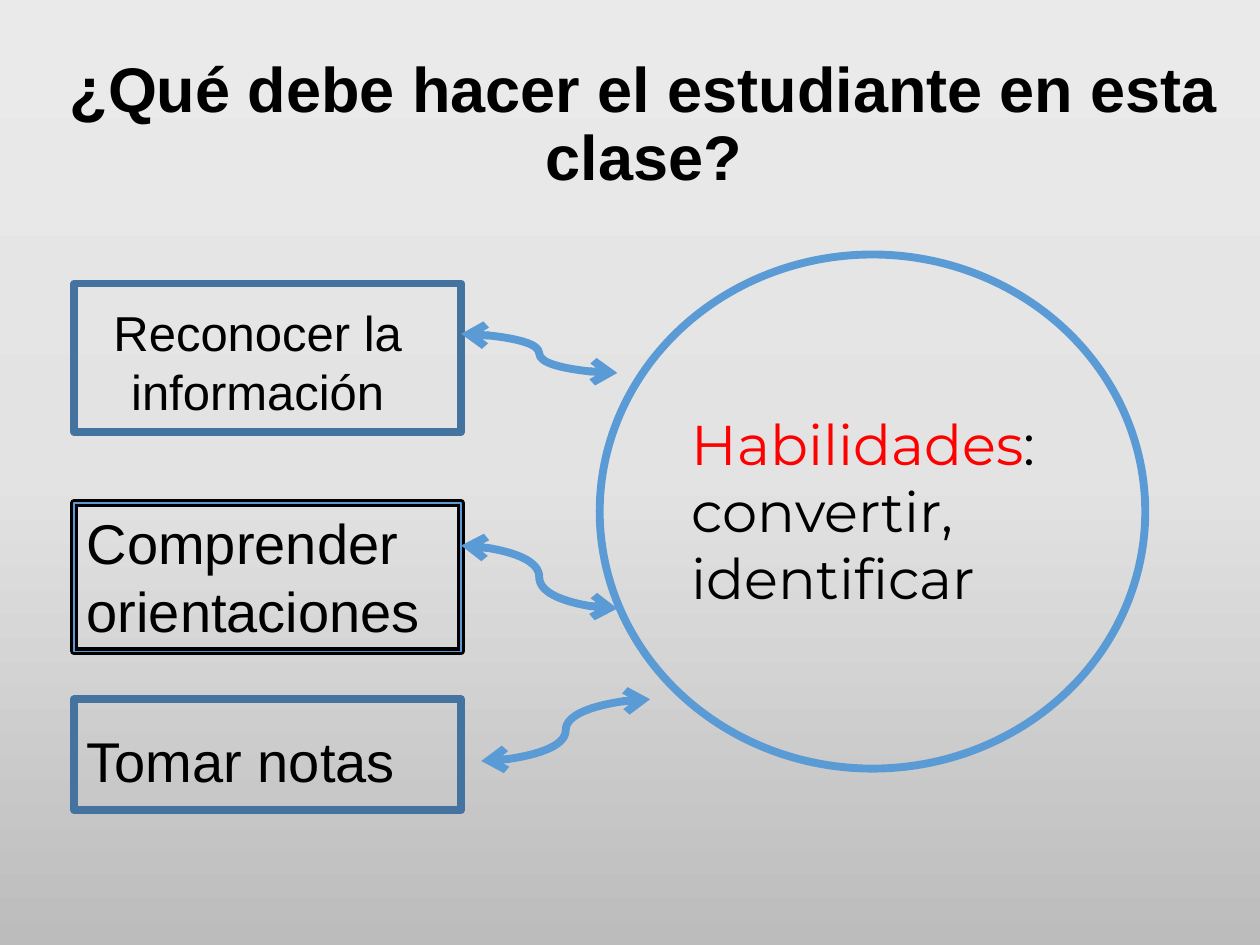
from copy import deepcopy
from dataclasses import dataclass

from pptx import Presentation
from pptx import util as u
from pptx.dml.color import RGBColor
from pptx.enum import shapes, text
from pptx.oxml.ns import qn
from lxml import etree


@dataclass(frozen=True)
class Theme:
    background: tuple = ((0, "EBEAEA"), (0.5, "E4E3E3"), (1, "BDBCBC"))
    ink: str = "000000"
    accent: str = "FF0000"
    blue: str = "5B9BD5"
    dark_blue: str = "43739E"
    body_font: str = "Arial"
    skill_font: str = "Montserrat"
    title_size: int = 36
    body_size: int = 32
    small_size: int = 28
    thick: float = 4.5
    thin: float = 1


THEME = Theme()
LEFT, CENTER = text.PP_ALIGN.LEFT, text.PP_ALIGN.CENTER
RECTANGLE, OVAL = shapes.MSO_SHAPE.RECTANGLE, shapes.MSO_SHAPE.OVAL


def inches(values):
    return [u.Inches(value) for value in values]


def paint_background(page):
    fill = page.background.fill
    fill.gradient()
    fill.gradient_angle = 270
    first = fill.gradient_stops[0]._gs
    first.addnext(deepcopy(first))
    for stop, (position, color) in zip(fill.gradient_stops, THEME.background):
        stop.position = position
        stop.color.rgb = RGBColor.from_string(color)


def style_line(line, color, width):
    line.color.rgb = RGBColor.from_string(color)
    line.width = u.Pt(width)


def add_outline(page, preset, place, color, width=THEME.thick):
    shape = page.shapes.add_shape(preset, *inches(place))
    shape.shadow.inherit = False
    shape.fill.background()
    style_line(shape.line, color, width)
    return shape


def add_text(page, place, parts, size, align=LEFT, font=THEME.body_font, bold=False):
    """Parts are (wording, colour) pairs that form one paragraph."""
    box = page.shapes.add_textbox(*inches(place))
    box.text_frame.word_wrap = True
    para = box.text_frame.paragraphs[0]
    para.alignment = align
    for wording, color in parts:
        span = para.add_run()
        span.text = wording
        span.font.name = font
        span.font.size = u.Pt(size)
        span.font.bold = bold
        span.font.color.rgb = RGBColor.from_string(color)
    return box


def add_double_arrow(page, start, end):
    arrow = page.shapes.add_connector(
        shapes.MSO_CONNECTOR.CURVE, *inches(start + end))
    style_line(arrow.line, THEME.blue, THEME.thick)
    line = arrow.line._get_or_add_ln()
    for tag in ("a:headEnd", "a:tailEnd"):
        etree.SubElement(line, qn(tag), type="arrow")
    etree.SubElement(arrow._element.spPr, qn("a:effectLst"))


def main():
    deck = Presentation()
    deck.slide_width, deck.slide_height = inches((10, 7.5))
    page = deck.slides.add_slide(deck.slide_layouts[6])
    paint_background(page)

    # Title
    title = add_text(page, (0.43, 0.41, 9.36, 1.18),
                     [("¿Qué debe hacer el estudiante en esta clase?", THEME.ink)],
                     THEME.title_size, CENTER, bold=True)
    title.text_frame.vertical_anchor = text.MSO_ANCHOR.MIDDLE
    title.text_frame.paragraphs[0].line_spacing = 0.9

    # Task frames; the middle one has a thin blue line over a black one
    left, width = 0.59, 3.07
    middle = (left, 3.99, width, 1.18)
    add_outline(page, RECTANGLE, (left, 2.25, width, 1.18), THEME.dark_blue)
    frame = add_outline(page, RECTANGLE, middle, THEME.ink)
    etree.SubElement(frame.line._get_or_add_ln(), qn("a:round"))
    add_outline(page, RECTANGLE, middle, THEME.blue, THEME.thin)
    add_outline(page, RECTANGLE, (left, 5.55, width, 0.88), THEME.dark_blue)

    # Task wording
    tasks = (
        ("Reconocer la información", (0.43, 2.35, 3.23, 1.04), THEME.small_size, CENTER),
        ("Comprender orientaciones", middle, THEME.body_size, LEFT),
        ("Tomar notas", (left, 5.72, 2.68, 0.64), THEME.body_size, LEFT),
    )
    for wording, place, size, align in tasks:
        add_text(page, place, [(wording, THEME.ink)], size, align)

    # Skills circle
    add_text(page, (5.39, 3.2, 3.62, 1.72),
             [("Habilidades", THEME.accent), (": convertir, identificar", THEME.ink)],
             THEME.body_size, font=THEME.skill_font)
    add_outline(page, OVAL, (4.76, 2.02, 4.33, 4.08), THEME.blue)

    # Arrows between the tasks and the skills
    for start, end in (((3.66, 2.65), (4.9, 2.96)),
                       ((3.66, 4.33), (4.9, 4.83)),
                       ((3.82, 6.04), (5.16, 5.55))):
        add_double_arrow(page, start, end)

    deck.save("out.pptx")


if __name__ == "__main__":
    main()
